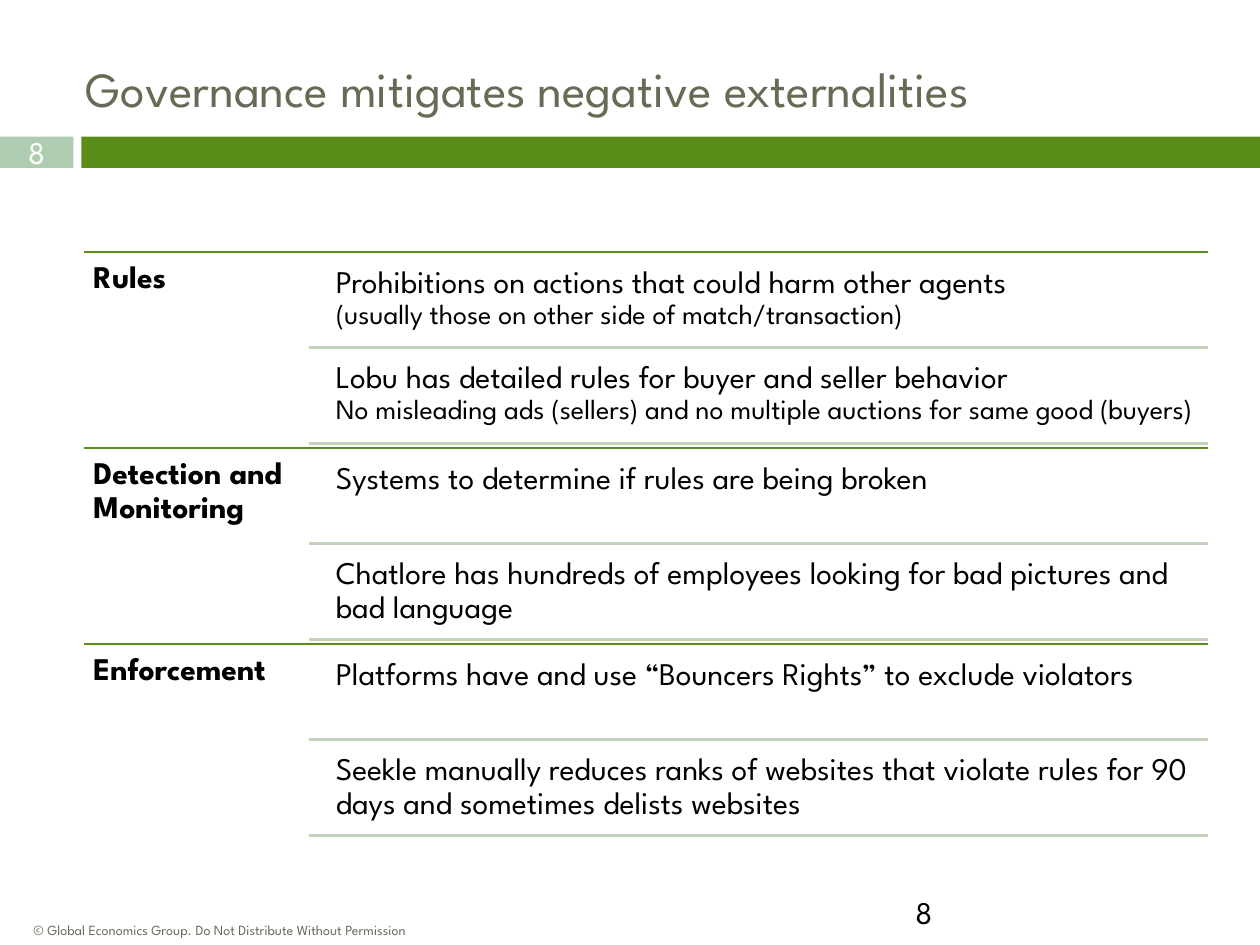
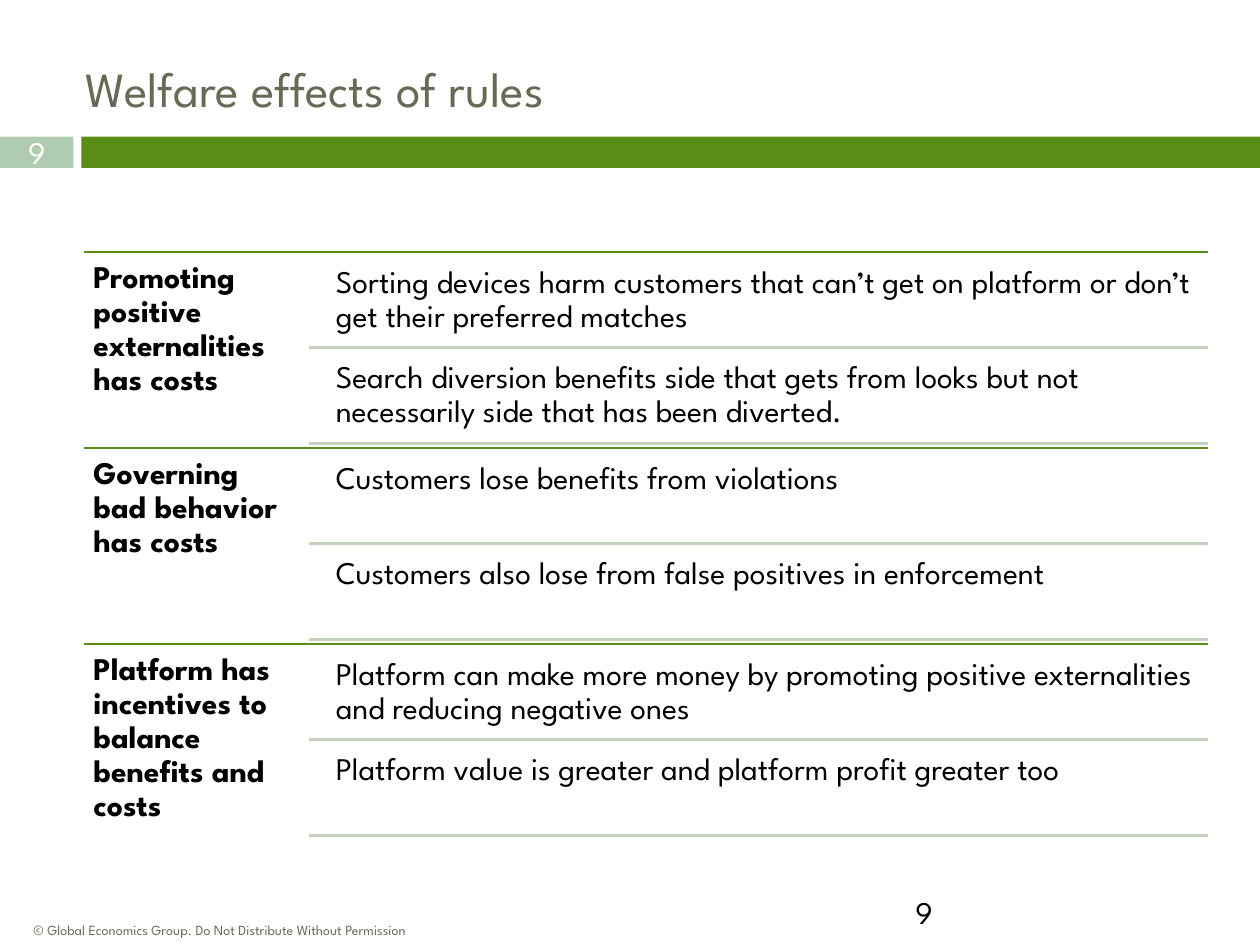
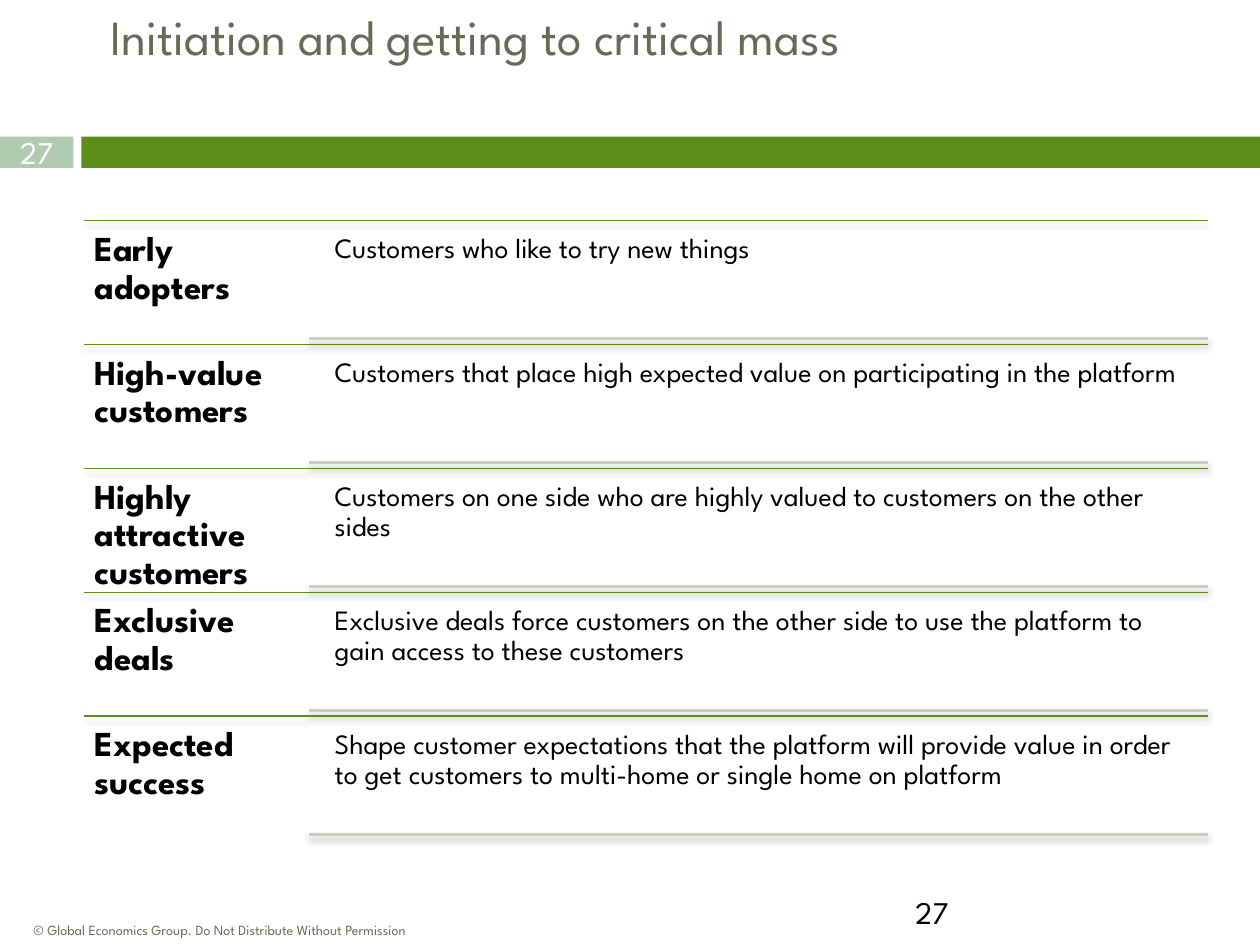
"""Build three slides on platform governance and critical mass."""
import lxml.etree
import pptx
import pptx.dml.color
import pptx.enum.shapes
import pptx.enum.text
import pptx.oxml.ns
import pptx.util

Pt = pptx.util.Pt
FONT = "League Spartan"
COLORS = {"green": "5A8E19", "sage": "B0CCB0", "pale": "C4D1BD",
          "olive": "676A55", "black": "000000", "white": "FFFFFF"}
COPYRIGHT = "© Global Economics Group. Do Not Distribute Without Permission"
LEFT, RIGHT, BOTTOM = 48, 690.5, 480
LABEL_WIDTH = (RIGHT - LEFT) / 5
DETAIL_LINE_LEFT = LEFT + LABEL_WIDTH
DETAIL_LEFT = 186.5
GAP_RATIO = 0.05
INSET_RATIO = 0.3
TITLE_BOX = (42, 30, 642, 48)

SLIDES = [
    {"number": 8, "title": "Governance mitigates negative externalities",
     "outline": {"top": 144, "groups": [
         ("Rules", [
             ["Prohibitions on actions that could harm other agents",
              "(usually those on other side of match/transaction)"],
             ["Lobu has detailed rules for buyer and seller behavior",
              "No misleading ads (sellers) and no multiple auctions for same good (buyers)"]]),
         ("Detection and Monitoring", [
             ["Systems to determine if rules are being broken"],
             ["Chatlore has hundreds of employees looking for bad pictures and bad language"]]),
         ("Enforcement", [
             ["Platforms have and use “Bouncers Rights” to exclude violators"],
             ["Seekle manually reduces ranks of websites that violate rules for "
              "90 days and sometimes delists websites"]])]}},
    {"number": 9, "title": "Welfare effects of rules",
     "outline": {"top": 144, "groups": [
         ("Promoting positive externalities has costs", [
             ["Sorting devices harm customers that can’t get on platform or don’t "
              "get their preferred matches"],
             ["Search diversion benefits side that gets from looks but not "
              "necessarily side that has been diverted."]]),
         ("Governing bad behavior has costs", [
             ["Customers lose benefits from violations"],
             ["Customers also lose from false positives in enforcement"]]),
         ("Platform has incentives to balance benefits and costs", [
             ["Platform can make more money by promoting positive externalities "
              "and reducing negative ones"],
             ["Platform value is greater and platform profit greater too"]])]}},
    {"number": 27, "title": "Initiation and getting to critical mass",
     "title_box": (56, 0, 531, 75),
     "outline": {"top": 126, "label_size": 20, "detail_size": 16,
                 "heading_weight": 0.79, "shadow": True, "groups": [
         ("Early adopters", [["Customers who like to try new things"]]),
         ("High-value customers", [
             ["Customers that place high expected value on participating in the platform"]]),
         ("Highly attractive customers", [
             ["Customers on one side who are highly valued to customers on the other sides"]]),
         ("Exclusive deals", [
             ["Exclusive deals force customers on the other side to use the platform to "
              "gain access to these customers"]]),
         ("Expected success", [
             ["Shape customer expectations that the platform will provide value in order "
              "to get customers to multi-home or single home on platform"]])]}},
]


def rgb(name):
    """Return the named palette colour."""
    return pptx.dml.color.RGBColor.from_string(COLORS[name])


def set_formats(target, formats):
    """Set each attribute of the target from a dict of format values."""
    for name, value in formats.items():
        setattr(target, name, value)


def write_text(shape, lines, color="black", bold=False, frame=None, paragraph_formats=None):
    """Fill a shape with (text, size) lines, one paragraph each."""
    set_formats(shape.text_frame, {"word_wrap": True, **(frame or {})})
    for index, (text, size) in enumerate(lines):
        paragraphs = shape.text_frame.paragraphs
        paragraph = shape.text_frame.add_paragraph() if index else paragraphs[0]
        set_formats(paragraph, paragraph_formats or {})
        run = paragraph.add_run()
        run.text = text
        set_formats(run.font, {"name": FONT, "size": Pt(size), "bold": bold})
        run.font.color.rgb = rgb(color)


def add_text(slide, box, lines, **options):
    """Add a text box at a (left, top, width, height) box."""
    shape = slide.shapes.add_textbox(*map(Pt, box))
    write_text(shape, lines, **options)


def add_outline_text(slide, box, lines, bold=False):
    """Add tight outline text whose insets follow its first size."""
    inset = Pt(lines[0][1] * INSET_RATIO)
    sides = ("margin_left", "margin_top", "margin_right", "margin_bottom")
    add_text(slide, box, lines, bold=bold, frame=dict.fromkeys(sides, inset),
             paragraph_formats={"line_spacing": 0.9})


def add_band(slide, left, width, color):
    """Add one filled piece of the band below the title."""
    shape = slide.shapes.add_shape(pptx.enum.shapes.MSO_SHAPE.RECTANGLE,
                                   Pt(left), Pt(78), Pt(width), Pt(18))
    shape.shadow.inherit = False
    shape.fill.solid()
    shape.fill.fore_color.rgb = rgb(color)
    shape.line.fill.background()
    return shape


def add_rule(slide, left, top, color, weight, shadow):
    """Add a horizontal rule that ends at the right edge of the outline."""
    connector = slide.shapes.add_connector(pptx.enum.shapes.MSO_CONNECTOR.STRAIGHT,
                                           Pt(left), Pt(top), Pt(RIGHT), Pt(top))
    connector.line.color.rgb = rgb(color)
    connector.line.width = Pt(weight)
    qn = pptx.oxml.ns.qn
    effects = lxml.etree.SubElement(connector._element.spPr, qn("a:effectLst"))
    if shadow:
        outer = lxml.etree.SubElement(effects, qn("a:outerShdw"), blurRad=str(Pt(3)),
                                      dist=str(Pt(2.4)), dir="5400000", rotWithShape="0")
        black = lxml.etree.SubElement(outer, qn("a:srgbClr"), val=COLORS["black"])
        lxml.etree.SubElement(black, qn("a:alpha"), val="45000")


def add_outline(slide, top, groups, label_size=18, detail_size=18,
                heading_weight=1.5, shadow=False):
    """Add labelled groups of details, evenly spaced down to the bottom."""
    pitch = (BOTTOM - top) / len(groups)
    for index, (label, details) in enumerate(groups):
        group_top = top + index * pitch
        add_rule(slide, LEFT, group_top, "green", heading_weight, shadow)
        add_outline_text(slide, (LEFT, group_top, LABEL_WIDTH, pitch),
                         [(label, label_size)], bold=True)
        height = pitch / (len(details) * (1 + GAP_RATIO) + GAP_RATIO)
        gap = height * GAP_RATIO
        for row, (main_text, *notes) in enumerate(details):
            detail_top = group_top + gap + row * (height + gap)
            lines = [(main_text, detail_size)] + [(note, 16) for note in notes]
            add_outline_text(slide, (DETAIL_LEFT, detail_top, RIGHT - DETAIL_LEFT, height), lines)
            add_rule(slide, DETAIL_LINE_LEFT, detail_top + height, "pale", 1.5, shadow)


def add_frame(slide, number, title, title_box):
    """Add the title, band, page numbers and copyright line."""
    middle = {"vertical_anchor": pptx.enum.text.MSO_ANCHOR.MIDDLE}
    add_band(slide, 46.5, 673.5, "green")
    write_text(add_band(slide, 0, 42, "sage"), [(str(number), 18)], color="white", frame=middle,
               paragraph_formats={"alignment": pptx.enum.text.PP_ALIGN.CENTER})
    add_text(slide, title_box, [(title, 28)], color="olive")
    add_text(slide, (516, 507, 168, 29), [(str(number), 18)])
    add_text(slide, (12, 517, 312, 29), [(COPYRIGHT, 8)], color="olive", frame=middle)


def main():
    """Build and save the presentation."""
    presentation = pptx.Presentation()
    set_formats(presentation, {"slide_width": Pt(720), "slide_height": Pt(540)})
    for content in SLIDES:
        slide = presentation.slides.add_slide(presentation.slide_layouts[6])
        add_frame(slide, content["number"], content["title"],
                  content.get("title_box", TITLE_BOX))
        add_outline(slide, **content["outline"])
    presentation.save("out.pptx")


if __name__ == "__main__":
    main()
